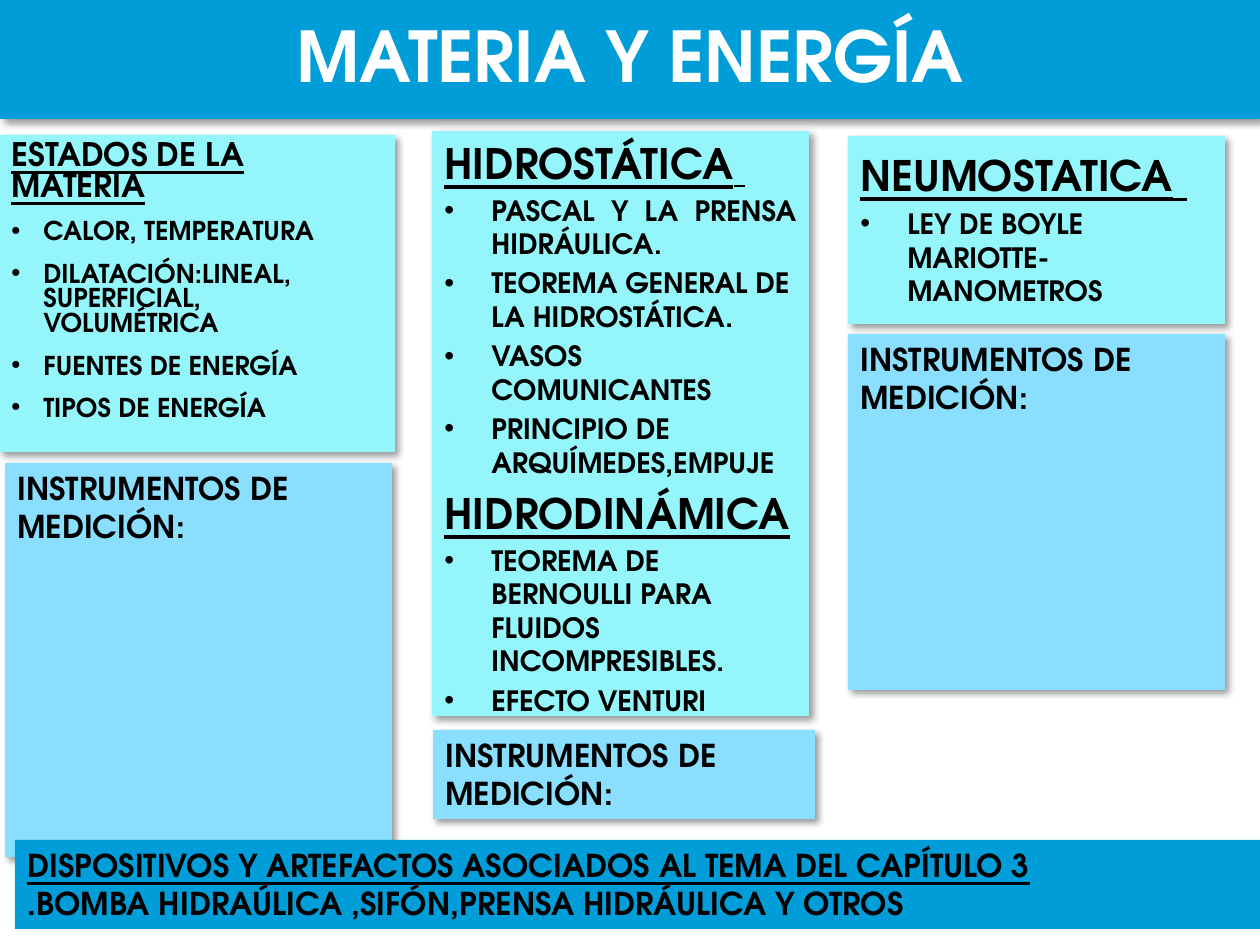
"""Builds the slide "Materia y energía" with its topic panels."""
from lxml import etree
from pptx import Presentation
from pptx import util as u
from pptx.dml.color import RGBColor
from pptx.enum import shapes, text
from pptx.oxml import parse_xml
from pptx.oxml.ns import nsdecls, qn

PX = u.Inches(1) / 126
FONT = "TeX Gyre Adventor"
BLUE, AQUA, SKY = "009DD9", "94F5FA", "8ADFFF"
LEFT, CENTER, JUSTIFY = text.PP_ALIGN.LEFT, text.PP_ALIGN.CENTER, text.PP_ALIGN.JUSTIFY
SHADOW = (
    f'<a:effectLst {nsdecls("a")}><a:outerShdw blurRad="50800" dist="38100" dir="2700000" '
    'algn="tl" rotWithShape="0"><a:srgbClr val="000000"><a:alpha val="40000"/></a:srgbClr>'
    "</a:outerShdw></a:effectLst>"
)


def px(length):
    return u.Emu(round(length * PX))


def rgb(value):
    return RGBColor.from_string(value)


STYLES = {
    "title": {"size": 40, "color": "FFFFFF", "alignment": CENTER, "line_spacing": 0.9},
    "states": {"size": 18.5, "underline": True, "line_spacing": 0.8},
    "state": {"size": 14.8, "alignment": JUSTIFY, "line_spacing": 0.8, "before": 10, "indent": 32},
    "topic": {"size": 24, "underline": True, "before": 4.8},
    "law": {"size": 16, "before": 3.2, "indent": 47},
    "justified law": {"size": 16, "alignment": JUSTIFY, "before": 3.2, "indent": 47},
    "label": {"size": 18},
    "underlined label": {"size": 18, "underline": True},
}
INSTRUMENTS = [("label", "INSTRUMENTOS DE MEDICIÓN:")]
PANELS = [
    ((0, 0, 1260, 119), BLUE, True, [("title", "MATERIA Y ENERGÍA")]),
    ((-1, 135, 396, 317), AQUA, True, [
        ("states", "ESTADOS DE LA MATERIA"),
        ("state", "CALOR, TEMPERATURA"),
        ("state", "DILATACIÓN:LINEAL, SUPERFICIAL, VOLUMÉTRICA"),
        ("state", "FUENTES DE ENERGÍA"),
        ("state", "TIPOS DE ENERGÍA"),
    ]),
    ((432, 131, 377, 585), AQUA, True, [
        ("topic", "HIDROSTÁTICA", 24),
        ("justified law", "PASCAL Y LA PRENSA HIDRÁULICA."),
        ("law", "TEOREMA GENERAL DE LA HIDROSTÁTICA."),
        ("law", "VASOS COMUNICANTES"),
        ("law", "PRINCIPIO DE ARQUÍMEDES,EMPUJE"),
        ("topic", "HIDRODINÁMICA"),
        ("law", "TEOREMA DE BERNOULLI PARA FLUIDOS INCOMPRESIBLES."),
        ("law", "EFECTO VENTURI"),
    ]),
    ((848, 136, 377, 188), AQUA, True, [
        ("topic", "NEUMOSTATICA", 28),
        ("law", "LEY DE BOYLE MARIOTTE- MANOMETROS"),
    ]),
    ((848, 334, 377, 356), SKY, True, INSTRUMENTS),
    ((5, 463, 387, 394), SKY, True, INSTRUMENTS),
    ((433, 730, 382, 89), SKY, True, INSTRUMENTS),
    ((15, 840, 1245, 89), BLUE, False, [
        ("underlined label", "DISPOSITIVOS Y ARTEFACTOS ASOCIADOS AL TEMA DEL CAPÍTULO 3"),
        ("label", ".BOMBA HIDRAÚLICA ,SIFÓN,PRENSA HIDRÁULICA Y OTROS"),
    ]),
]

presentation = Presentation()
presentation.slide_width, presentation.slide_height = px(1260), px(945)
slide = presentation.slides.add_slide(presentation.slide_layouts[6])

for bounds, fill, shadowed, paragraphs in PANELS:
    shape = slide.shapes.add_shape(shapes.MSO_SHAPE.RECTANGLE, *map(px, bounds))
    shape.fill.solid()
    shape.fill.fore_color.rgb = rgb(fill)
    shape.line.fill.background()
    if shadowed:
        shape._element.spPr.append(parse_xml(SHADOW))
    else:
        shape.shadow.inherit = False
    frame = shape.text_frame
    frame.word_wrap = True
    is_title = paragraphs[0][0] == "title"
    frame.vertical_anchor = text.MSO_ANCHOR.MIDDLE if is_title else text.MSO_ANCHOR.TOP

    for index, (style_name, wording, *space_size) in enumerate(paragraphs):
        style = STYLES[style_name]
        paragraph = frame.add_paragraph() if index else frame.paragraphs[0]
        if "indent" in style:
            properties = paragraph._p.get_or_add_pPr()
            properties.set("marL", str(px(style["indent"])))
            properties.set("indent", str(px(-style["indent"])))
            etree.SubElement(properties, qn("a:buFont")).set("typeface", "Arial")
            etree.SubElement(properties, qn("a:buChar")).set("char", "•")
        layout = {
            "alignment": style.get("alignment", LEFT),
            "line_spacing": style.get("line_spacing", 1.0),
            "space_before": u.Pt(style.get("before", 0) if index else 0),
        }
        for name, value in layout.items():
            setattr(paragraph, name, value)

        runs = [(wording, style["size"], True)] + [(" ", size, False) for size in space_size]
        for run_text, size, bold in runs:
            run = paragraph.add_run()
            run.text = run_text
            font_values = {
                "name": FONT,
                "size": u.Pt(size),
                "bold": bold,
                "underline": style.get("underline", False),
            }
            for name, value in font_values.items():
                setattr(run.font, name, value)
            run.font.color.rgb = rgb(style.get("color", "000000"))

presentation.save("out.pptx")
